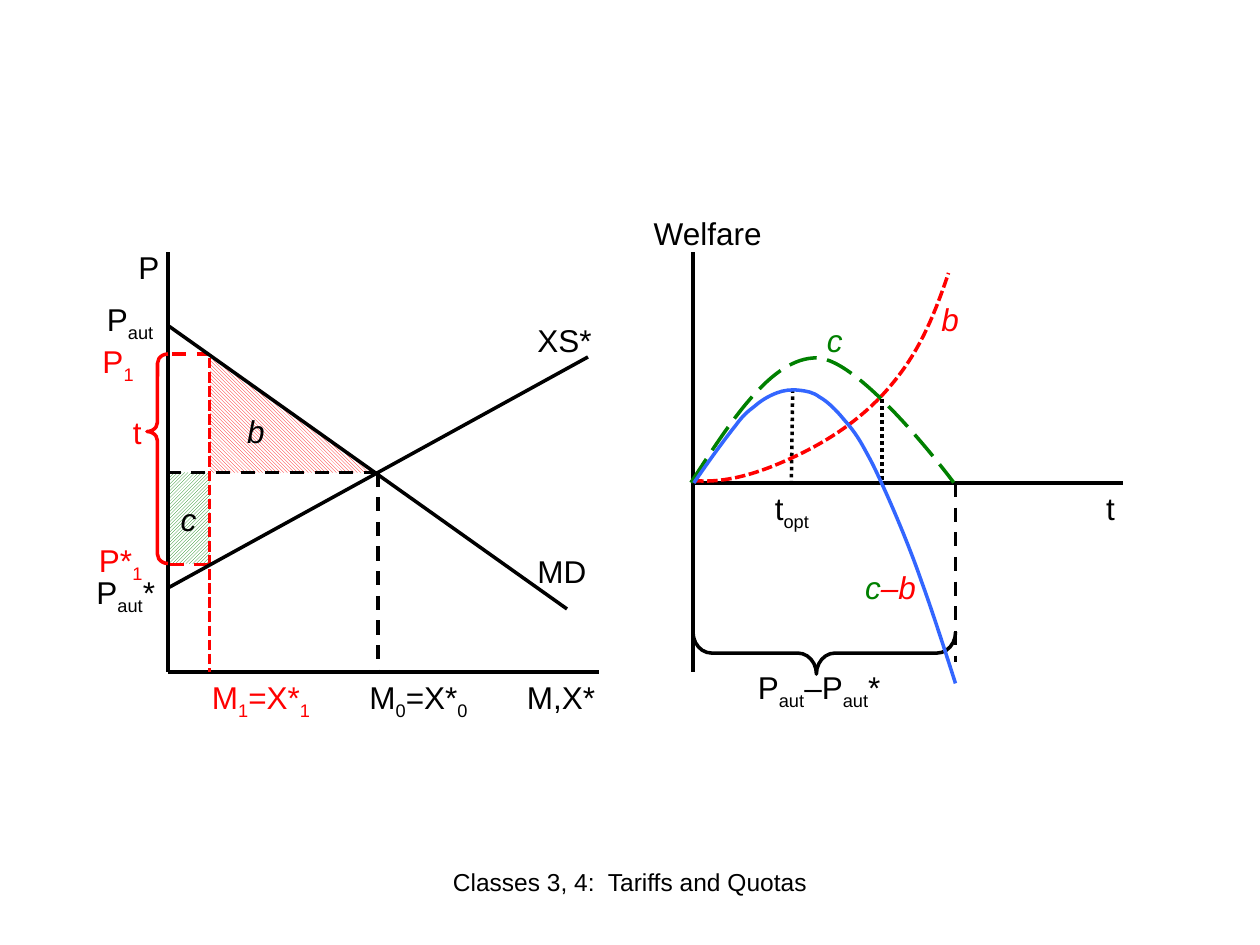
from lxml import etree
from pptx import Presentation
from pptx.dml.color import RGBColor
from pptx.enum.dml import MSO_LINE, MSO_PATTERN
from pptx.enum.shapes import MSO_CONNECTOR, MSO_SHAPE
from pptx.enum.text import MSO_AUTO_SIZE, PP_ALIGN
from pptx.oxml.ns import qn
from pptx.util import Pt

DASH, LONG = MSO_LINE.DASH, MSO_LINE.LONG_DASH
SHORT, DOT = MSO_LINE.SQUARE_DOT, MSO_LINE.ROUND_DOT
UP, DOWN = MSO_PATTERN.DARK_UPWARD_DIAGONAL, MSO_PATTERN.DARK_DOWNWARD_DIAGONAL
RECT, TRIANGLE, BRACE = MSO_SHAPE.RECTANGLE, MSO_SHAPE.RIGHT_TRIANGLE, MSO_SHAPE.LEFT_BRACE
STRAIGHT = MSO_CONNECTOR.STRAIGHT
GROW, FIXED = MSO_AUTO_SIZE.SHAPE_TO_FIT_TEXT, MSO_AUTO_SIZE.NONE
L, C = PP_ALIGN.LEFT, PP_ALIGN.CENTER
COLORS = {"black": "000000", "white": "FFFFFF", "red": "FF0000",
          "green": "008000", "blue": "3366FF"}
RGB = {name: RGBColor.from_string(value) for name, value in COLORS.items()}


def style_line(shape, color, dash=None):
    shape.line.color.rgb = RGB[color]
    shape.line.width = Pt(2)
    if dash:
        shape.line.dash_style = dash


def add_label(x, y, w, align, parts, size=18, italic=False, h=29, fit=GROW):
    """Write (text, color) parts; text between underscores is subscript."""
    tf = s.shapes.add_textbox(Pt(x), Pt(y), Pt(w), Pt(h)).text_frame
    tf.word_wrap = True
    tf.auto_size = fit
    p = tf.paragraphs[0]
    p.alignment = align
    for text, color in parts:
        for i, piece in enumerate(text.split("_")):
            if not piece:
                continue
            r = p.add_run()
            r.text = piece
            r.font.name = "Arial"
            r.font.size = Pt(size)
            r.font.italic = italic
            r.font.color.rgb = RGB[color]
            if i % 2:
                r._r.get_or_add_rPr().set("baseline", "-25000")


prs = Presentation()
prs.slide_width, prs.slide_height = Pt(720), Pt(540)
s = prs.slides.add_slide(prs.slide_layouts[6])

# Hatched areas b and c
for kind, x, y, w, h, pattern, color in [
    (RECT, 96, 270, 24, 52.2, UP, "green"),
    (TRIANGLE, 120, 204.5, 95, 65.5, DOWN, "red"),
]:
    sp = s.shapes.add_shape(kind, Pt(x), Pt(y), Pt(w), Pt(h))
    sp.shadow.inherit = False
    sp.line.fill.background()
    sp.fill.patterned()
    sp.fill.pattern = pattern
    sp.fill.fore_color.rgb = RGB[color]
    sp.fill.back_color.rgb = RGB["white"]

# Axes, supply and demand lines, guides
for x1, y1, x2, y2, color, dash in [
    (96, 384, 342, 384, "black", None),
    (96, 384, 96, 144, "black", None),
    (216, 270, 216, 384, "black", DASH),
    (119.75, 204.5, 119.75, 384, "red", SHORT),
    (97, 322.5, 120, 322.5, "red", DASH),
    (98.5, 202.3, 119.5, 202.3, "red", DASH),
    (96, 336, 336, 204, "black", None),
    (324, 348, 96, 186, "black", None),
    (216, 270, 96, 270, "black", DASH),
    (396, 276, 642, 276, "black", None),
    (396, 384, 396, 144, "black", None),
    (546, 276, 546, 378, "black", DASH),
    (504, 228, 504, 276, "black", DOT),
    (453, 222.5, 452.2, 276.5, "black", DOT),
]:
    line = s.shapes.add_connector(STRAIGHT, Pt(x1), Pt(y1), Pt(x2), Pt(y2))
    style_line(line, color, dash)
    etree.SubElement(line._element.spPr, qn("a:effectLst"))

# Braces, flipped vertically
for x, y, w, h, rotation, tip, color in [
    (84, 202.3, 12, 119.7, 0, 0.63, "red"),
    (459, 298.2, 24, 150, 270, 0.53, "black"),
]:
    sp = s.shapes.add_shape(BRACE, Pt(x), Pt(y), Pt(w), Pt(h))
    sp.shadow.inherit = False
    sp.fill.background()
    sp.rotation = rotation
    sp._element.spPr.find(qn("a:xfrm")).set("flipV", "1")
    sp.adjustments[0], sp.adjustments[1] = 0.44, tip
    style_line(sp, color)

# Welfare curves: start point, then two controls and an end per Bezier segment
for color, dash, points in [
    ("red", SHORT, [
        (396, 274.6), (416, 276.5), (436, 269.5), (455, 260.5),
        (474, 251.5), (493, 239), (508, 221.5), (523, 204), (532, 186), (542, 156)]),
    ("green", LONG, [
        (394.8, 275.8), (418, 240), (441, 204.5), (466.5, 204.5),
        (492, 204.5), (545, 275.8), (545, 275.8)]),
    ("blue", None, [
        (396.5, 276), (405, 263.5), (414.5, 250.5), (420.5, 243),
        (426, 235.5), (428.5, 234.5), (432, 231.5), (435.5, 228.5), (440, 226), (444, 224.5),
        (448, 223), (452, 222.5), (456.5, 223), (461, 223.5), (464.5, 224), (468.5, 227),
        (473, 229.5), (478, 234.5), (482.5, 240), (487, 245), (490.5, 250), (494, 256.5),
        (497.5, 263), (498.5, 264.5), (504, 276.5), (510, 289.5), (520, 313), (526.5, 332),
        (533.5, 351), (546, 390.5), (546, 390.5)]),
]:
    vertices = [(Pt(x), Pt(y)) for x, y in points]
    builder = s.shapes.build_freeform(*vertices[0])
    builder.add_line_segments(vertices[1:], close=False)
    sp = builder.convert_to_shape()
    # Join each three straight steps into one Bezier segment
    outline = next(sp._element.iter(qn("a:moveTo"))).getparent()
    steps = outline.findall(qn("a:lnTo"))
    for i in range(0, len(steps), 3):
        bezier = etree.SubElement(outline, qn("a:cubicBezTo"))
        for step in steps[i:i + 3]:
            bezier.append(step[0])
            outline.remove(step)
    sp.shadow.inherit = False
    sp.fill.background()
    style_line(sp, color, dash)

# Axis, curve and price labels
for x, y, w, align, text, color in [
    (72, 138, 54, L, "P", "black"),
    (54, 168, 48, L, "P_aut_", "black"),
    (48, 324, 54, L, "P_aut_*", "black"),
    (300, 312, 54, L, "MD", "black"),
    (300, 180, 54, L, "XS*", "black"),
    (294, 384, 54, L, "M,X*", "black"),
    (204, 384, 84, L, "M_0_=X*_0_", "black"),
    (114, 384, 78, L, "M_1_=X*_1_", "red"),
    (46.5, 192, 42, C, "P_1_", "red"),
    (48, 305.5, 42, C, "P*_1_", "red"),
    (60.5, 232.5, 36, C, "t", "red"),
    (366.5, 119, 80, L, "Welfare", "black"),
    (426, 378, 114, L, "P_aut_–P_aut_*", "black"),
    (435.7, 276, 39, L, "t_opt_", "black"),
    (625, 276, 39, L, "t", "black"),
]:
    add_label(x, y, w, align, [(text, color)])

# Area and welfare curve names
for x, y, w, parts in [
    (102, 232, 88.5, [("b", "black")]),
    (92.7, 282, 30, [("c", "black")]),
    (462, 180, 30, [("c", "green")]),
    (528, 168, 30, [("b", "red")]),
    (460.8, 321, 96, [("c", "green"), ("–b", "red")]),
]:
    add_label(x, y, w, C, parts, italic=True)

# Footer
add_label(246, 492, 228, C, [("Classes 3, 4:  Tariffs and Quotas", "black")],
          size=14, h=37.5, fit=FIXED)

prs.save("out.pptx")
